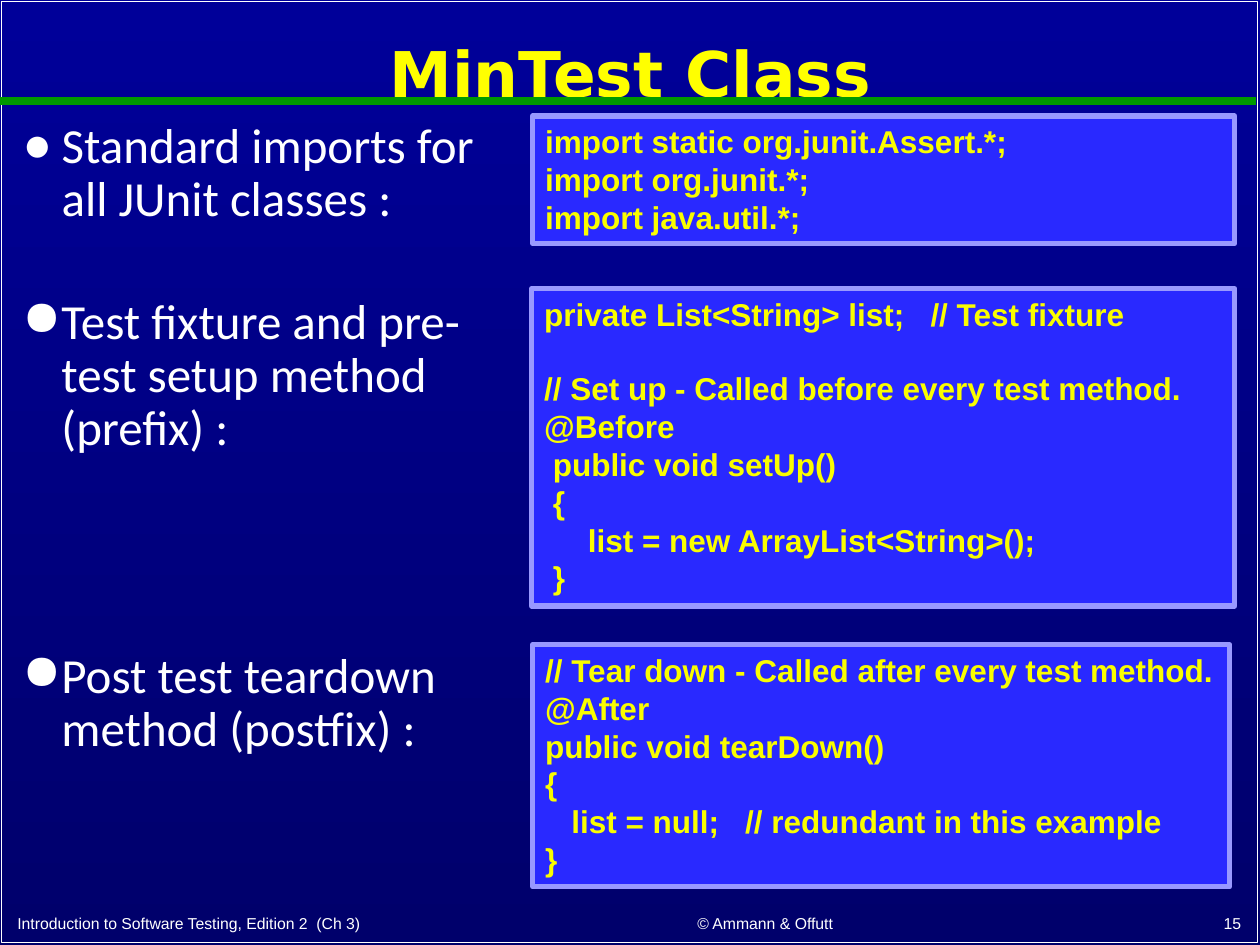
from lxml.etree import SubElement
from pptx import Presentation
from pptx.dml.color import RGBColor
from pptx.enum.shapes import MSO_CONNECTOR, MSO_SHAPE
from pptx.enum.text import MSO_ANCHOR as Anchor, MSO_AUTO_SIZE as AutoSize, PP_ALIGN as Align
from pptx.oxml.ns import qn
from pptx.util import Cm, Pt

NAVY = RGBColor(0x00, 0x00, 0x99)
DARK_NAVY = RGBColor(0x00, 0x00, 0x6B)
WHITE = RGBColor(0xFF, 0xFF, 0xFF)
GREEN = RGBColor(0x00, 0x99, 0x00)
YELLOW = RGBColor(0xFF, 0xFF, 0x00)
CODE_YELLOW = RGBColor(0xFA, 0xFD, 0x00)
CODE_BLUE = RGBColor(0x29, 0x29, 0xFF)
CODE_EDGE = RGBColor(0x99, 0x99, 0xFF)

IMPORTS = """import static org.junit.Assert.*;
import org.junit.*;
import java.util.*;"""

SETUP = """private List<String> list;   // Test fixture

// Set up - Called before every test method.
@Before
 public void setUp()
 {
     list = new ArrayList<String>();
 }"""

TEARDOWN = """// Tear down - Called after every test method.
@After
public void tearDown()
{
   list = null;   // redundant in this example
}"""


class LectureSlide:
    """Holds the lecture style and the page being drawn."""

    title_font, body_font, code_font = "DejaVu Sans", "Calibri", "Arial"
    code_line = Pt(21)

    def __init__(self, deck):
        self.page = deck.slides.add_slide(deck.slide_layouts[1])
        self.shapes = self.page.shapes

    def background(self):
        fill = self.page.background.fill
        fill.gradient()
        fill.gradient_angle = 270
        for stop, position, color in zip(fill.gradient_stops, (0, 1), (NAVY, DARK_NAVY)):
            stop.position = position
            stop.color.rgb = color

    def rectangle(self, left, top, width, height, edge, weight):
        box = self.shapes.add_shape(MSO_SHAPE.RECTANGLE, Cm(left), Cm(top), Cm(width), Cm(height))
        box.shadow.inherit = False
        box.fill.background()
        box.line.color.rgb = edge
        box.line.width = Pt(weight)
        return box

    def rule(self, top, right):
        line = self.shapes.add_connector(MSO_CONNECTOR.STRAIGHT, 0, Cm(top), Cm(right), Cm(top))
        line.line.color.rgb = GREEN
        line.line.width = Pt(4.5)
        SubElement(line._element.spPr, qn("a:effectLst"))

    def place(self, box, left, top, width, height, anchor=Anchor.TOP):
        """Position a text holder and return its wrapping frame."""
        box.left, box.top, box.width, box.height = Cm(left), Cm(top), Cm(width), Cm(height)
        frame = box.text_frame
        frame.word_wrap = True
        frame.auto_size = AutoSize.NONE
        frame.vertical_anchor = anchor
        return frame

    def add_span(self, para, text, font, size, color, bold=False, align=Align.LEFT):
        para.alignment = align
        para.space_before = Pt(0)
        span = para.add_run()
        span.text = text
        span.font.name = font
        span.font.size = Pt(size)
        span.font.bold = bold
        span.font.color.rgb = color

    def title(self, text):
        frame = self.place(self.shapes.title, 0.13, 0.28, 25.15, 2.54, Anchor.MIDDLE)
        para = frame.paragraphs[0]
        para.line_spacing = 0.9
        self.add_span(para, text, self.title_font, 36, YELLOW, True, Align.CENTER)

    def bullet(self, text, top, box=None):
        box = box or self.shapes.add_textbox(0, 0, 0, 0)
        para = self.place(box, 0.2, top, 10.67, 3).paragraphs[0]
        para.line_spacing = 0.9
        self.add_span(para, text, self.body_font, 28, WHITE)
        properties = para._p.get_or_add_pPr()
        properties.set("marL", str(Cm(0.79)))
        properties.set("indent", str(Cm(-0.79)))
        color = SubElement(properties, qn("a:buClr"))
        SubElement(color, qn("a:srgbClr"), val=str(WHITE))
        SubElement(properties, qn("a:buChar"), char="●")

    def code(self, source, left, top, width, height):
        """Draw a code panel; an empty source line becomes paragraph spacing."""
        box = self.rectangle(left, top, width, height, CODE_EDGE, 3)
        box.fill.solid()
        box.fill.fore_color.rgb = CODE_BLUE
        frame = self.place(box, left, top, width, height)
        para = None
        for line in source.splitlines():
            if not line:
                para.space_after = self.code_line
                continue
            para = frame.add_paragraph() if para else frame.paragraphs[0]
            self.add_span(para, line, self.code_font, 18, CODE_YELLOW, True)

    def footer(self, text, left, width, align):
        box = self.shapes.add_textbox(0, 0, 0, 0)
        frame = self.place(box, left, 18.22, width, 0.71, Anchor.BOTTOM)
        self.add_span(frame.paragraphs[0], text, self.code_font, 9, WHITE, align=align)


def main():
    deck = Presentation()
    deck.slide_width, deck.slide_height = Cm(25.4), Cm(19.05)
    slide = LectureSlide(deck)

    slide.background()
    slide.rectangle(0.03, 0.03, 25.32, 18.97, WHITE, 1)
    slide.rule(2.03, 25.32)
    slide.title("MinTest Class")

    slide.bullet("Standard imports for all JUnit classes :", 2.31, slide.page.placeholders[1])
    slide.bullet("Test fixture and pre-test setup method (prefix) :", 5.87)
    slide.bullet("Post test teardown method (postfix) :", 13)

    slide.code(IMPORTS, 10.74, 2.34, 14.15, 2.57)
    slide.code(SETUP, 10.72, 5.82, 14.17, 6.4)
    slide.code(TEARDOWN, 10.74, 13, 14.05, 4.88)

    slide.footer("Introduction to Software Testing, Edition 2  (Ch 3)", 0.1, 10.67, Align.LEFT)
    slide.footer("© Ammann & Offutt", 11.4, 8.05, Align.CENTER)
    slide.footer("15", 19.99, 5.28, Align.RIGHT)

    deck.save("out.pptx")


if __name__ == "__main__":
    main()
